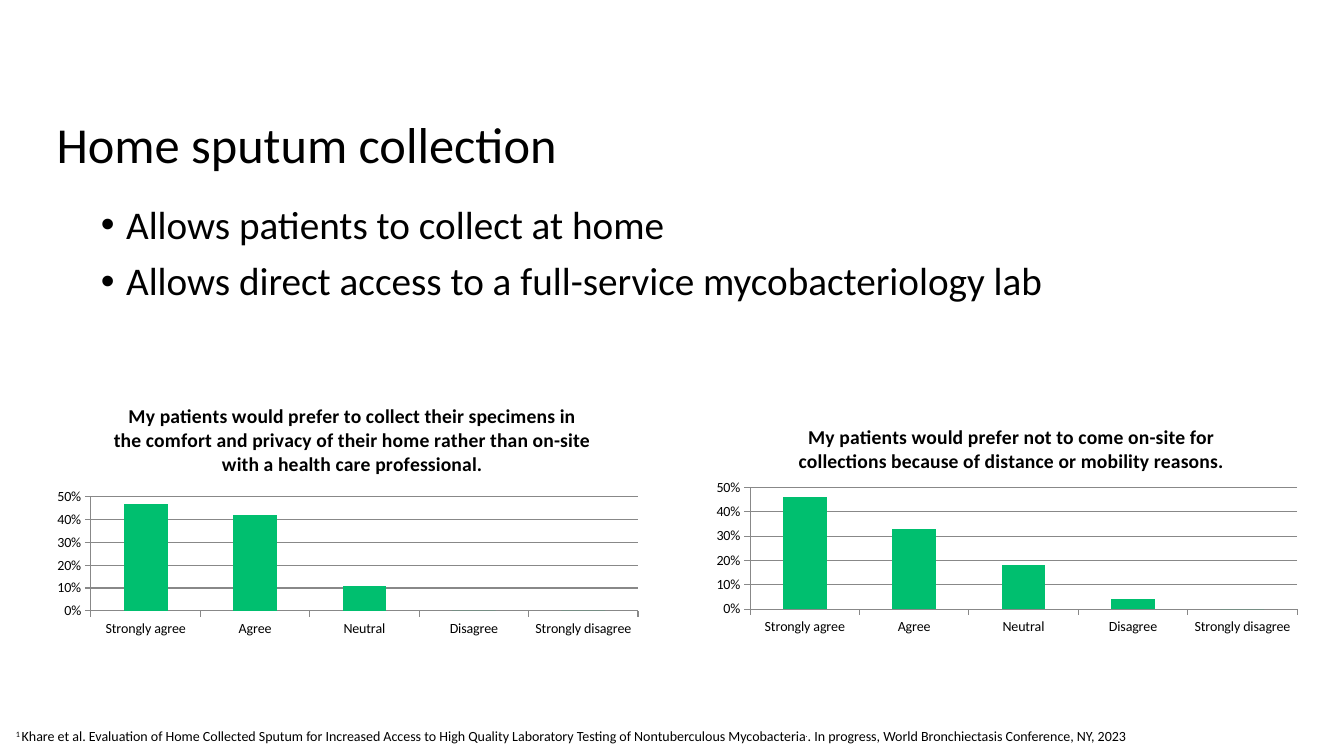
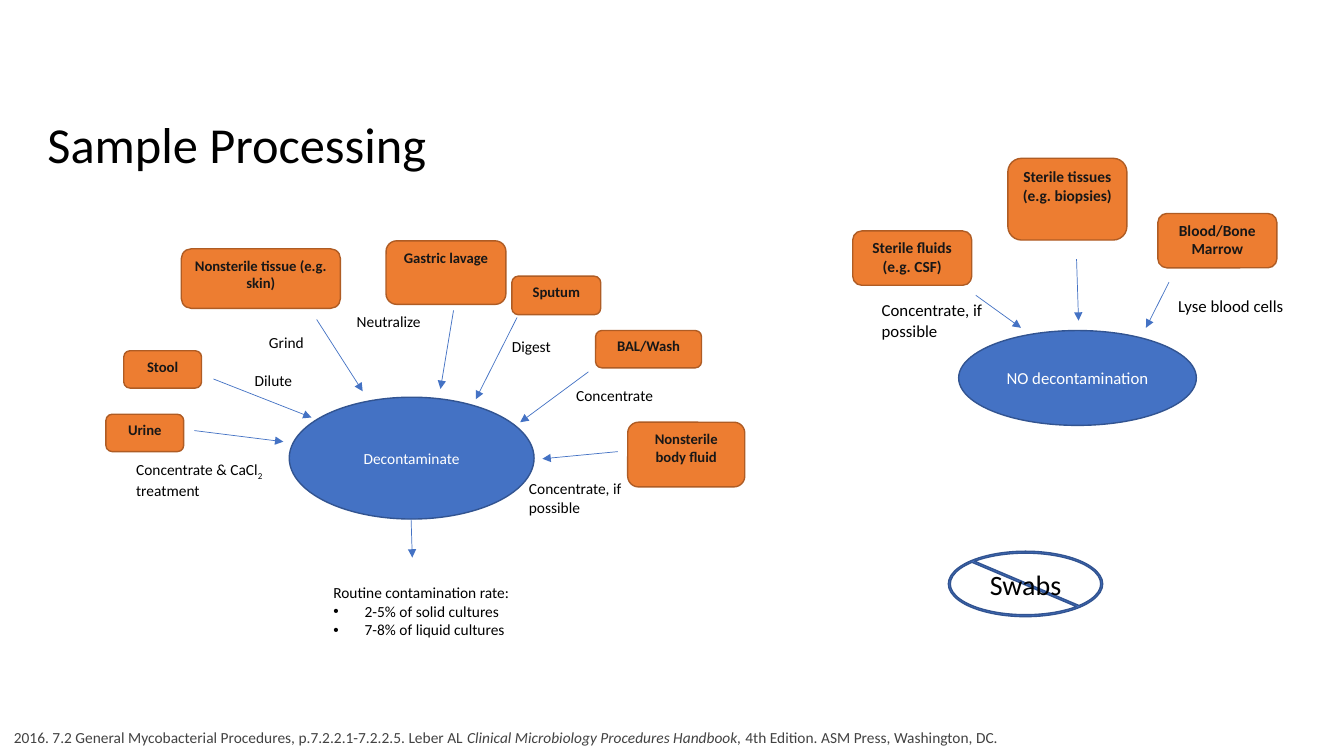
"""Build two slides on home sputum collection and sample processing."""
from lxml import etree
from pptx import Presentation
from pptx.chart.data import CategoryChartData
from pptx.dml.color import RGBColor
from pptx.enum.chart import XL_CHART_TYPE, XL_TICK_MARK
from pptx.enum.shapes import MSO_CONNECTOR, MSO_SHAPE
from pptx.enum.text import MSO_ANCHOR, PP_ALIGN
from pptx.oxml import parse_xml
from pptx.oxml.ns import nsdecls, qn
from pptx.util import Cm, Pt

COLUMN = XL_CHART_TYPE.COLUMN_CLUSTERED
OUT, NONE = XL_TICK_MARK.OUTSIDE, XL_TICK_MARK.NONE
STRAIGHT = MSO_CONNECTOR.STRAIGHT
CARD, OVAL, BAN = MSO_SHAPE.FLOWCHART_ALTERNATE_PROCESS, MSO_SHAPE.OVAL, MSO_SHAPE.NO_SYMBOL
TOP, MIDDLE = MSO_ANCHOR.TOP, MSO_ANCHOR.MIDDLE
LEFT, CENTER = PP_ALIGN.LEFT, PP_ALIGN.CENTER

FONT = "Calibri"
BLACK, WHITE, INK, SLATE = "000000", "FFFFFF", "181717", "424242"
BLUE, NAVY, ORANGE, RUST = "4472C4", "325491", "ED7D31", "AF5C24"
GREEN, GRAY = "00BF6F", "888888"
rgb = RGBColor.from_string


def write(shape, lines, size, color=BLACK, bold=False, align=LEFT, anchor=TOP,
          wrap=True, spacing=None, before=0, indent=0, first=0):
    """Fill a shape with lines; a line is a string or a list of (text, attribute, value)."""
    frame = shape.text_frame
    frame.word_wrap = wrap
    frame.vertical_anchor = anchor
    for i, line in enumerate(lines):
        para = frame.add_paragraph() if i else frame.paragraphs[0]
        parts = [(line, None, None)] if isinstance(line, str) else line
        for text, key, value in parts:
            run = para.add_run()
            run.text = text
            if key:
                run._r.get_or_add_rPr().set(key, value)
        if indent and i >= first:
            props = para._p.get_or_add_pPr()
            props.set("marL", str(Cm(indent)))
            props.set("indent", str(-Cm(indent)))
            etree.SubElement(props, qn("a:buFont")).set("typeface", "Arial")
            etree.SubElement(props, qn("a:buChar")).set("char", "•")
        para.alignment = align
        if spacing:
            para.line_spacing = spacing
        if before and i:
            para.space_before = Pt(before)
        font = para.font
        font.name, font.size, font.bold = FONT, Pt(size), bold
        font.color.rgb = rgb(color)


def draw(slide, kind, spot, fill, edge):
    """Add a filled, outlined shape without a shadow."""
    shape = slide.shapes.add_shape(kind, *map(Cm, spot))
    shape.shadow.inherit = False
    shape.fill.solid()
    shape.fill.fore_color.rgb = rgb(fill)
    shape.line.color.rgb = rgb(edge)
    shape.line.width = Pt(1)
    return shape


deck = Presentation()
deck.slide_width, deck.slide_height = Cm(33.87), Cm(19.05)

heads = [("Home sputum collection", 1.17), ("Sample Processing", 0.94)]
slides = []
for text, left in heads:
    slide = deck.slides.add_slide(deck.slide_layouts[5])
    title = slide.shapes.title
    title.left, title.top, title.width, title.height = map(Cm, (left, 2.9, 23.95, 2.5))
    write(title, [text], 36, spacing=0.9)
    slides.append(slide)
home, lab = slides

body = home.shapes.add_textbox(Cm(2.29), Cm(5.05), Cm(28.88), Cm(12.22))
write(body, ["Allows patients to collect at home",
             "Allows direct access to a full-service mycobacteriology lab"],
      28, spacing=0.9, before=10, indent=0.64)

votes = ["Strongly agree", "Agree", "Neutral", "Disagree", "Strongly disagree"]
charts = [
    ("My patients would prefer not to come on-site for collections because of "
     "distance or mobility reasons.",
     17.83, 10.31, (0.46, 0.33, 0.18, 0.04, 0), (0.07, 0.31, 0.9, 0.48)),
    ("My patients would prefer to collect their specimens in the comfort and privacy "
     "of their home rather than on-site with a health care professional.",
     1.22, 9.78, (0.47, 0.42, 0.11, 0, 0), (0.07, 0.43, 0.9, 0.45)),
]
for text, left, top, values, plot in charts:
    data = CategoryChartData(number_format="0%")
    data.categories = votes
    data.add_series("Series 1", values)
    frame = home.shapes.add_chart(COLUMN, Cm(left), Cm(top), Cm(15.32), Cm(6.38), data)
    chart = frame.chart
    chart.font.name, chart.font.size = FONT, Pt(10)
    chart.font.color.rgb = rgb(BLACK)
    chart.has_legend = False
    chart.has_title = True
    para = chart.chart_title.text_frame.paragraphs[0]
    para.add_run().text = text
    para.font.name, para.font.size, para.font.bold = FONT, Pt(14), True
    para.font.color.rgb = rgb(BLACK)
    chart.chart_title.include_in_layout = False
    bars = chart.plots[0]
    bars.gap_width = 150
    bars.vary_by_categories = False
    fill = bars.series[0].format.fill
    fill.solid()
    fill.fore_color.rgb = rgb(GREEN)
    scale = chart.value_axis
    scale.minimum_scale, scale.maximum_scale, scale.major_unit = 0, 0.5, 0.1
    scale.tick_labels.number_format = "0%"
    scale.tick_labels.number_format_is_linked = False
    scale.has_major_gridlines = True
    for axis in (scale, chart.category_axis):
        axis.major_tick_mark, axis.minor_tick_mark = OUT, NONE
    for part in (scale, chart.category_axis, scale.major_gridlines):
        part.format.line.color.rgb = rgb(GRAY)
        part.format.line.width = Pt(0.75)
    area = chart._chartSpace.chart.plotArea
    for old in area.findall(qn("c:layout")):
        area.remove(old)
    sides = "".join(f'<c:{name} val="{value}"/>' for name, value in zip("xywh", plot))
    area.insert(0, parse_xml(
        f'<c:layout {nsdecls("c")}><c:manualLayout><c:layoutTarget val="inner"/>'
        f'<c:xMode val="edge"/><c:yMode val="edge"/>{sides}</c:manualLayout></c:layout>'))

ovals = [
    ("Decontaminate", 11, (7.29, 10.01, 6.17, 3.07)),
    ("NO decontamination", 12, (24.16, 8.33, 5.99, 2.39)),
]
for text, size, spot in ovals:
    write(draw(lab, OVAL, spot, BLUE, NAVY), [text], size, WHITE, align=CENTER, anchor=MIDDLE)

cards = [
    ("Urine", 10.5, (2.67, 10.44, 1.96, 0.94)),
    ("Stool", 10.5, (3.12, 8.84, 1.96, 0.94)),
    ("BAL/Wash", 10.5, (15.01, 8.33, 2.67, 0.94)),
    ("Nonsterile tissue (e.g. skin)", 10.5, (4.57, 6.27, 4.01, 1.5)),
    ("Sputum", 10.5, (12.9, 6.96, 2.24, 0.97)),
    ("Nonsterile body fluid", 10.5, (15.82, 10.64, 2.95, 1.63)),
    ("Gastric lavage", 10.5, (9.73, 6.07, 3.02, 1.6)),
    ("Blood/Bone Marrow", 11, (29.18, 5.38, 3, 1.37)),
    ("Sterile fluids (e.g. CSF)", 11, (21.49, 5.82, 3, 1.37)),
    ("Sterile tissues (e.g. biopsies)", 11, (25.4, 3.99, 3, 2.06)),
]
for text, size, spot in cards:
    write(draw(lab, CARD, spot, ORANGE, RUST), [text], size, INK, bold=True, align=CENTER)

arrows = [
    (5.38, 9.55, 7.85, 10.52), (7.98, 8.05, 9.14, 9.86), (13.03, 8, 11.99, 10.06),
    (14.83, 9.37, 13.11, 10.64), (15.57, 11.38, 13.67, 11.56), (4.9, 10.85, 7.14, 11.13),
    (10.36, 13.08, 10.39, 14.05), (11.43, 7.82, 11.1, 9.8), (27.13, 6.53, 27.18, 8.08),
    (24.59, 7.44, 25.73, 8.26), (29.46, 7.11, 28.88, 8.26),
]
for ends in arrows:
    arrow = lab.shapes.add_connector(STRAIGHT, *map(Cm, ends))
    arrow.line.color.rgb = rgb(BLUE)
    arrow.line.width = Pt(0.5)
    props = arrow._element.spPr
    etree.SubElement(props.find(qn("a:ln")), qn("a:tailEnd")).set("type", "triangle")
    etree.SubElement(props, qn("a:effectLst"))

salt = [("Concentrate & CaCl", None, None), ("2", "baseline", "-25000"),
        (" treatment", None, None)]
labels = [
    ("Dilute", 11, False, (6.17, 9.22, 1.47, 0.74)),
    ("Neutralize", 11, False, (8.74, 7.75, 2.16, 0.74)),
    ("Digest", 11, False, (12.65, 8.36, 1.6, 0.74)),
    ("Concentrate", 11, False, (14.27, 9.6, 2.49, 0.74)),
    ("Grind", 11, False, (6.53, 8.28, 1.4, 0.74)),
    ("Concentrate, if possible", 11, True, (13.08, 11.96, 3.56, 1.19)),
    (salt, 11, True, (3.18, 11.48, 4.5, 1.19)),
    ("Lyse blood cells", 12, False, (29.44, 7.32, 3.2, 0.76)),
    ("Concentrate, if possible", 12, True, (21.97, 7.44, 3.15, 1.27)),
]
for text, size, wrap, spot in labels:
    write(lab.shapes.add_textbox(*map(Cm, spot)), [text], size, wrap=wrap)

rates = lab.shapes.add_textbox(Cm(8.15), Cm(14.58), Cm(5.08), Cm(1.68))
write(rates, ["Routine contamination rate:", "2-5% of solid cultures",
              "7-8% of liquid cultures"], 11, wrap=False, indent=0.79, first=1)

swabs = draw(lab, BAN, (23.9, 13.89, 3.89, 1.65), BLUE, NAVY)
swabs.adjustments[0] = 0.03
write(swabs, ["Swabs"], 20, align=CENTER, anchor=MIDDLE)

study = [
    ("1 ", "baseline", "30000"),
    ("Khare et al. Evaluation of Home Collected Sputum for Increased Access to High "
     "Quality Laboratory Testing of Nontuberculous Mycobacteria", None, None),
    (".", "baseline", "30000"),
    (". In progress, World Bronchiectasis Conference, NY, 2023", None, None),
]
book = [
    ("2016. 7.2 General Mycobacterial Procedures, p.7.2.2.1-7.2.2.5. Leber AL ", None, None),
    ("Clinical Microbiology Procedures Handbook, ", "i", "1"),
    ("4th Edition. ASM Press, Washington, DC.", None, None),
]
notes = [(home, study, 10, BLACK, 0.15), (lab, book, 11, SLATE, 0.1)]
for slide, parts, size, color, left in notes:
    foot = slide.shapes.add_textbox(Cm(left), Cm(18.22), Cm(33), Cm(0.7))
    write(foot, [parts], size, color)

deck.save("out.pptx")
